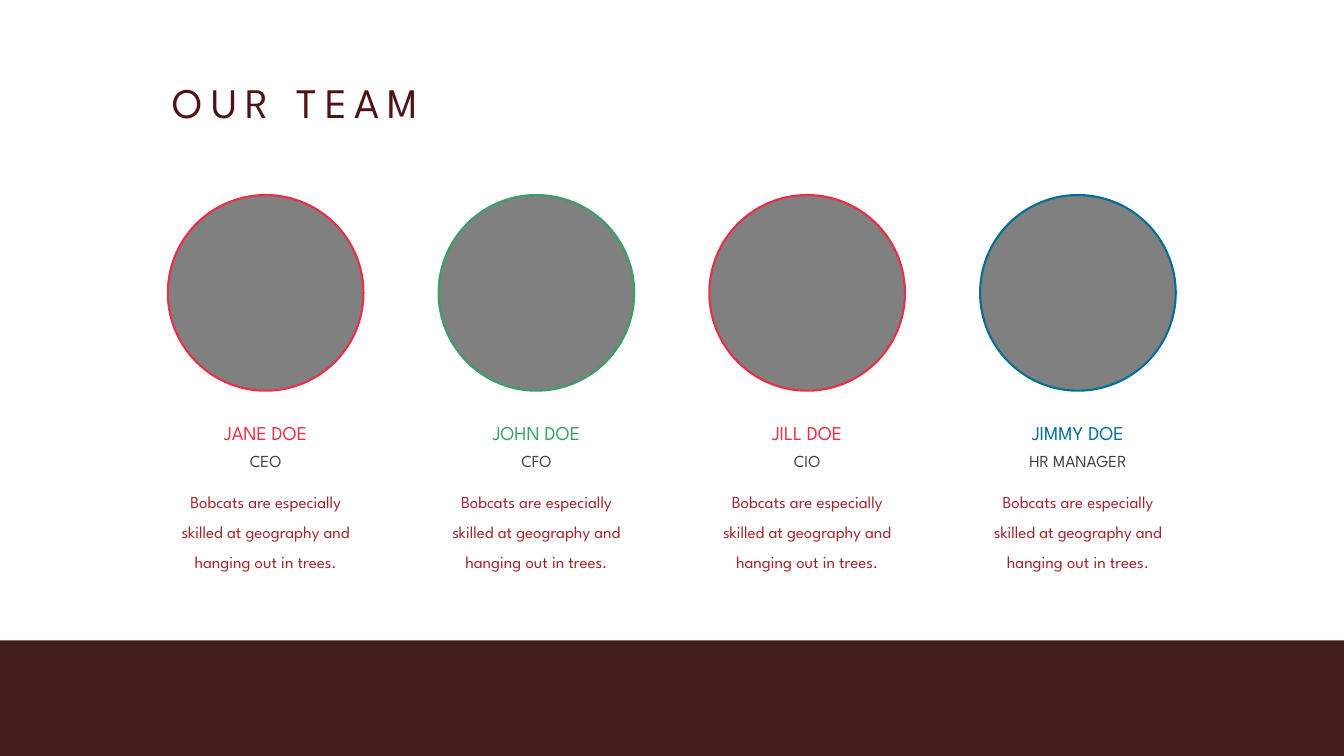
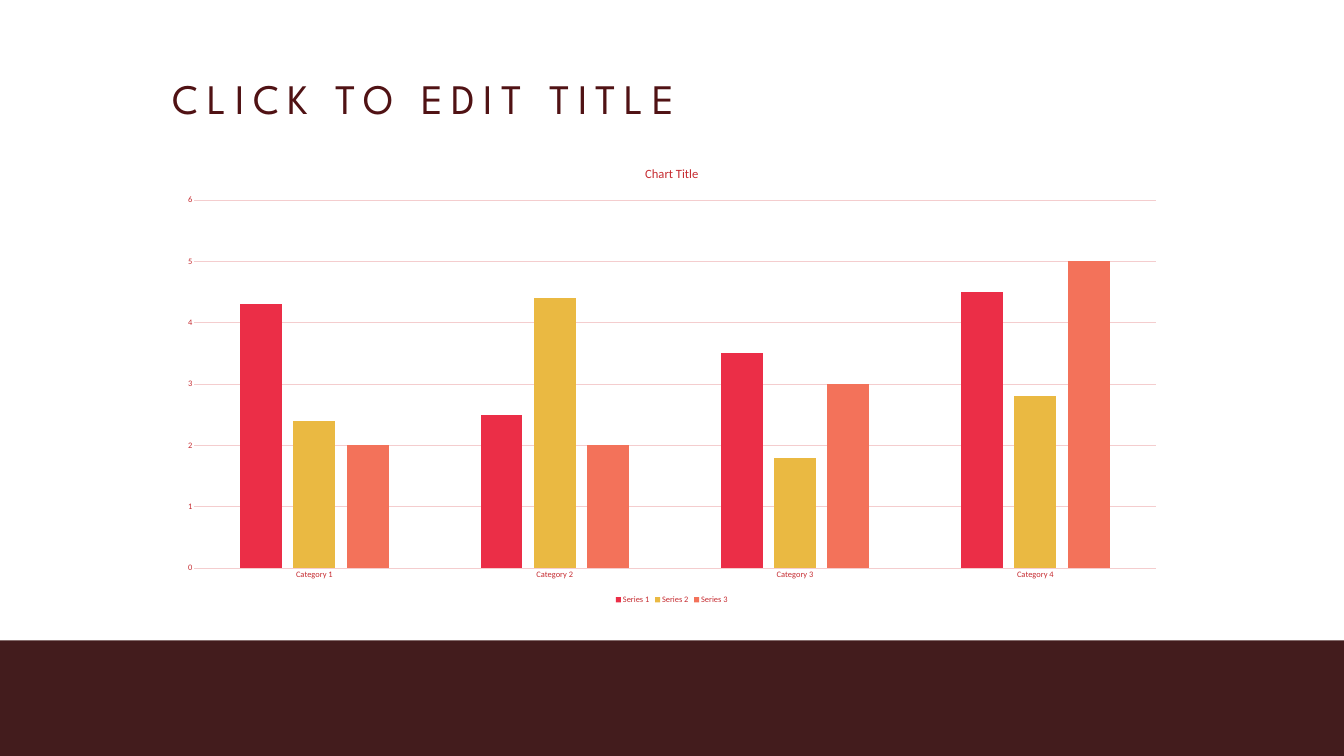
"""Build a team slide and a chart slide that share a title style and a footer band."""
from dataclasses import dataclass

from pptx import Presentation
from pptx.chart.data import CategoryChartData
from pptx.dml.color import RGBColor
from pptx.enum.chart import XL_CHART_TYPE, XL_LEGEND_POSITION, XL_TICK_MARK
from pptx.enum.shapes import MSO_SHAPE
from pptx.enum.text import MSO_ANCHOR, MSO_AUTO_SIZE, PP_ALIGN
from pptx.util import Cm, Pt

WHITE = RGBColor(0xFF, 0xFF, 0xFF)
BAND = RGBColor(0x43, 0x1C, 0x1D)
MAROON = RGBColor(0x50, 0x12, 0x14)
RED = RGBColor(0xEB, 0x2E, 0x47)
GREEN = RGBColor(0x3A, 0x9F, 0x68)
BLUE = RGBColor(0x00, 0x6F, 0x98)
YELLOW = RGBColor(0xEA, 0xB9, 0x42)
ORANGE = RGBColor(0xF3, 0x72, 0x5A)
GRAY = RGBColor(0x80, 0x80, 0x80)
CHARCOAL = RGBColor(0x41, 0x41, 0x41)
BRICK = RGBColor(0xA4, 0x25, 0x29)
CHART_TEXT = RGBColor(0xC6, 0x2C, 0x31)
CHART_LINE = RGBColor(0xF4, 0xCD, 0xCE)

FONT = "League Spartan"
CHART_FONT = "Calibri"
SLIDE_WIDTH, SLIDE_HEIGHT = 67.74, 38.1
MARGIN = 8.46
CONTENT_WIDTH = 50.8
BAND_TOP = 32.28
TITLE_ONLY = 5
PORTRAIT_SIZE = 9.86
BIO = "Bobcats are especially skilled at geography and hanging out in trees."


@dataclass
class Member:
    """A team member, with the widths of the name and role boxes in centimetres."""
    name: str
    role: str
    color: RGBColor
    name_width: float
    role_width: float


TEAM = [
    Member("JANE DOE", "CEO", RED, 5.21, 2.24),
    Member("JOHN DOE", "CFO", GREEN, 5.46, 2.24),
    Member("JILL DOE", "CIO", RED, 4.52, 1.98),
    Member("JIMMY DOE", "HR MANAGER", BLUE, 5.87, 6.27),
]
CATEGORIES = ["Category 1", "Category 2", "Category 3", "Category 4"]
SERIES = [
    ("Series 1", (4.3, 2.5, 3.5, 4.5), RED),
    ("Series 2", (2.4, 4.4, 1.8, 2.8), YELLOW),
    ("Series 3", (2, 2, 3, 5), ORANGE),
]


def format_font(font, size, color, name=FONT):
    """Set the size, colour and typeface of a font."""
    font.name = name
    font.size = Pt(size)
    font.bold = False
    font.color.rgb = color


def add_slide(presentation, title, top, width, height, line_spacing=1.0):
    """Add a white slide with the footer band and a letter-spaced title."""
    slide = presentation.slides.add_slide(presentation.slide_layouts[TITLE_ONLY])
    slide.background.fill.solid()
    slide.background.fill.fore_color.rgb = WHITE

    band = slide.shapes.add_shape(MSO_SHAPE.RECTANGLE, 0, Cm(BAND_TOP),
                                  Cm(SLIDE_WIDTH), Cm(SLIDE_HEIGHT - BAND_TOP))
    band.shadow.inherit = False
    band.fill.solid()
    band.fill.fore_color.rgb = BAND
    band.line.fill.background()

    shape = slide.shapes.title
    shape.left, shape.top = Cm(MARGIN), Cm(top)
    shape.width, shape.height = Cm(width), Cm(height)
    frame = shape.text_frame
    frame.text = title
    frame.word_wrap = True
    frame.auto_size = MSO_AUTO_SIZE.NONE
    frame.vertical_anchor = MSO_ANCHOR.TOP
    paragraph = frame.paragraphs[0]
    paragraph.alignment = PP_ALIGN.LEFT
    paragraph.line_spacing = line_spacing
    format_font(paragraph.font, 60, MAROON)
    paragraph.runs[0]._r.get_or_add_rPr().set("spc", "1200")
    return slide


def add_centered_text(slide, text, center, top, width, height, size, color,
                      wrap=False, line_spacing=1.0):
    """Add a text box centred on a column."""
    box = slide.shapes.add_textbox(Cm(center - width / 2), Cm(top), Cm(width), Cm(height))
    frame = box.text_frame
    frame.text = text
    frame.word_wrap = wrap
    frame.auto_size = MSO_AUTO_SIZE.SHAPE_TO_FIT_TEXT
    paragraph = frame.paragraphs[0]
    paragraph.alignment = PP_ALIGN.CENTER
    paragraph.line_spacing = line_spacing
    format_font(paragraph.font, size, color)


def add_member(slide, member, left):
    """Add one team column: portrait circle, name, role and biography."""
    portrait = slide.shapes.add_shape(MSO_SHAPE.OVAL, Cm(left), Cm(9.83),
                                      Cm(PORTRAIT_SIZE), Cm(PORTRAIT_SIZE))
    portrait.shadow.inherit = False
    portrait.fill.solid()
    portrait.fill.fore_color.rgb = GRAY
    portrait.line.color.rgb = member.color
    portrait.line.width = Pt(3)

    center = left + PORTRAIT_SIZE / 2
    add_centered_text(slide, member.name, center, 21.08, member.name_width, 1.45,
                      28, member.color)
    add_centered_text(slide, member.role, center, 22.58, member.role_width, 1.27,
                      24, CHARCOAL)
    add_centered_text(slide, BIO, center, 24.13, PORTRAIT_SIZE, 4.88, 24, BRICK,
                      wrap=True, line_spacing=1.5)


def format_axis(axis):
    """Set the label font and remove the tick marks of an axis."""
    axis.major_tick_mark = XL_TICK_MARK.NONE
    axis.minor_tick_mark = XL_TICK_MARK.NONE
    format_font(axis.tick_labels.font, 12, CHART_TEXT, CHART_FONT)


def format_chart_line(line):
    """Give an axis or grid line its thin pale stroke."""
    line.color.rgb = CHART_LINE
    line.width = Pt(0.75)


def add_column_chart(slide):
    """Add the clustered column chart with its title and legend."""
    data = CategoryChartData()
    data.categories = CATEGORIES
    for name, values, _ in SERIES:
        data.add_series(name, values)
    chart = slide.shapes.add_chart(XL_CHART_TYPE.COLUMN_CLUSTERED, Cm(MARGIN), Cm(7.62),
                                   Cm(CONTENT_WIDTH), Cm(22.96), data).chart
    format_font(chart.font, 10, MAROON, CHART_FONT)

    chart.has_title = True
    title_frame = chart.chart_title.text_frame
    title_frame.text = "Chart Title"
    format_font(title_frame.paragraphs[0].font, 18, CHART_TEXT, CHART_FONT)
    chart.chart_title.include_in_layout = False

    chart.has_legend = True
    chart.legend.position = XL_LEGEND_POSITION.BOTTOM
    chart.legend.include_in_layout = False
    format_font(chart.legend.font, 12, CHART_TEXT, CHART_FONT)

    format_axis(chart.category_axis)
    format_chart_line(chart.category_axis.format.line)
    format_axis(chart.value_axis)
    chart.value_axis.minimum_scale = 0
    chart.value_axis.maximum_scale = 6
    chart.value_axis.major_unit = 1
    chart.value_axis.format.line.fill.background()
    format_chart_line(chart.value_axis.major_gridlines.format.line)

    plot = chart.plots[0]
    plot.vary_by_categories = False
    plot.gap_width = 219
    plot.overlap = -27
    for series, (_, _, color) in zip(plot.series, SERIES):
        series.format.fill.solid()
        series.format.fill.fore_color.rgb = color


def main():
    """Build both slides and save the presentation."""
    presentation = Presentation()
    presentation.slide_width = Cm(SLIDE_WIDTH)
    presentation.slide_height = Cm(SLIDE_HEIGHT)

    team_slide = add_slide(presentation, "OUR TEAM", 3.73, 35.61, 2.82)
    pitch = (CONTENT_WIDTH - PORTRAIT_SIZE) / (len(TEAM) - 1)
    for column, member in enumerate(TEAM):
        add_member(team_slide, member, MARGIN + column * pitch)

    chart_slide = add_slide(presentation, "CLICK TO EDIT TITLE", 3.81, CONTENT_WIDTH, 3.18,
                            line_spacing=0.9)
    add_column_chart(chart_slide)

    presentation.save("out.pptx")


if __name__ == "__main__":
    main()
